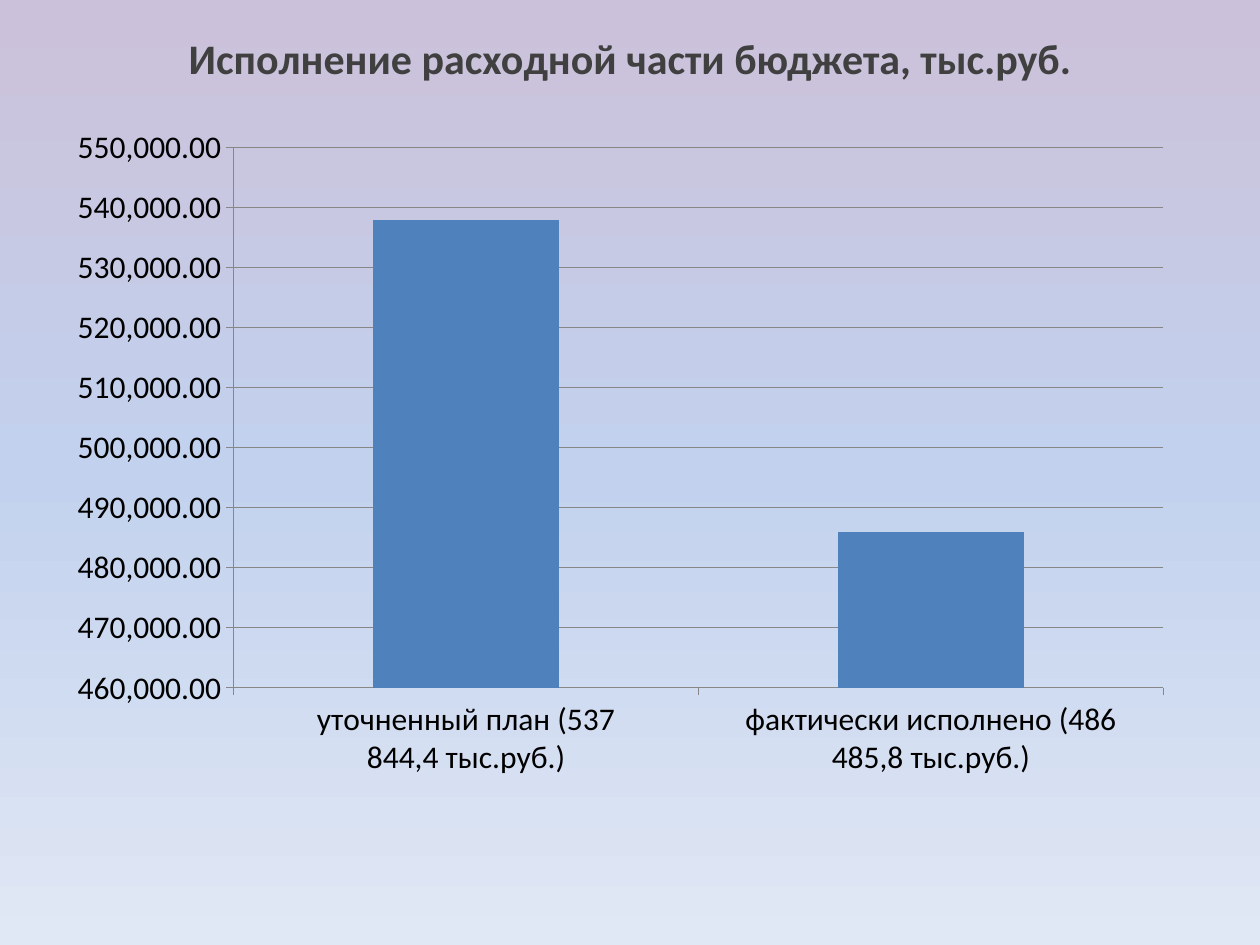
"""Build a slide comparing planned and actual budget expenditure."""
import copy

import pptx
import pptx.chart.data
import pptx.dml.color
import pptx.enum.chart
import pptx.enum.text
import pptx.oxml.ns
import pptx.util

PX = 914400 / 126
THEME = {
    "font": "Calibri",
    "title_size": 24,
    "chart_size": 18,
    "title": "404040",
    "text": "000000",
    "bar": "4F81BD",
    "grid": "878787",
    "background": [(0, "CCC1DA"), (0.5, "C2D1ED"), (1, "E1E8F5")],
}


def px(*lengths):
    return [pptx.util.Emu(round(length * PX)) for length in lengths]


def style_font(font, size, color, bold=False):
    font.name = THEME["font"]
    font.size = pptx.util.Pt(THEME[size])
    font.bold = bold
    font.color.rgb = pptx.dml.color.RGBColor.from_string(THEME[color])


deck = pptx.Presentation()
deck.slide_width, deck.slide_height = px(1260, 945)
slide = deck.slides.add_slide(deck.slide_layouts[6])

backdrop = slide.background.fill
backdrop.gradient()
backdrop.gradient_angle = 270
stop_list = slide.element.find(".//" + pptx.oxml.ns.qn("a:gsLst"))
stop_list.insert(1, copy.deepcopy(stop_list[0]))
for stop, (position, color) in zip(backdrop.gradient_stops, THEME["background"]):
    stop.position = position
    stop.color.rgb = pptx.dml.color.RGBColor.from_string(color)

heading = slide.shapes.add_textbox(*px(35, 26, 1190, 79)).text_frame
heading.word_wrap = True
heading.text = "Исполнение расходной части бюджета, тыс.руб."
heading_line = heading.paragraphs[0]
heading_line.alignment = pptx.enum.text.PP_ALIGN.CENTER
heading_line.space_before = pptx.util.Pt(4.8)
style_font(heading_line.runs[0].font, "title_size", "title", bold=True)

expenditure = pptx.chart.data.CategoryChartData(number_format="#,##0.00")
expenditure.categories = [
    "уточненный план (537\n844,4 тыс.руб.)",
    "фактически исполнено (486\n485,8 тыс.руб.)",
]
expenditure.add_series("Расходы", [538000, 486000])
chart = slide.shapes.add_chart(
    pptx.enum.chart.XL_CHART_TYPE.COLUMN_CLUSTERED, *px(55, 115, 1131, 675), expenditure
).chart
chart.has_title = False
chart.has_legend = False
style_font(chart.font, "chart_size", "text")

columns = chart.plots[0]
columns.gap_width = 150
columns.vary_by_categories = False
bars = columns.series[0].format.fill
bars.solid()
bars.fore_color.rgb = pptx.dml.color.RGBColor.from_string(THEME["bar"])

amounts = chart.value_axis
amounts.minimum_scale = 460000
amounts.maximum_scale = 550000
amounts.major_unit = 10000
amounts.has_major_gridlines = True
amounts.tick_labels.number_format = "#,##0.00"
amounts.tick_labels.number_format_is_linked = False
for axis in (amounts, chart.category_axis):
    axis.major_tick_mark = pptx.enum.chart.XL_TICK_MARK.OUTSIDE
    axis.minor_tick_mark = pptx.enum.chart.XL_TICK_MARK.NONE
for ruled in (amounts, chart.category_axis, amounts.major_gridlines):
    ruled.format.line.width = pptx.util.Pt(0.75)
    ruled.format.line.color.rgb = pptx.dml.color.RGBColor.from_string(THEME["grid"])

deck.save("out.pptx")
